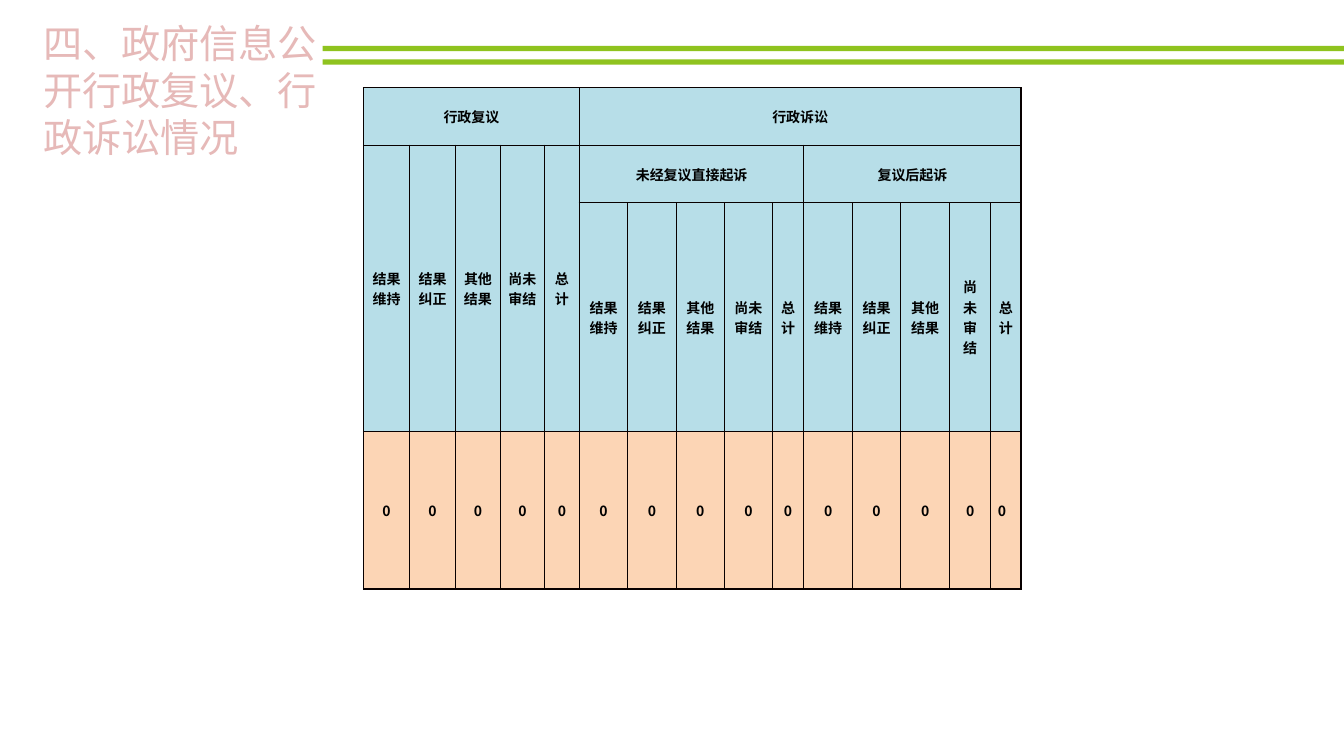
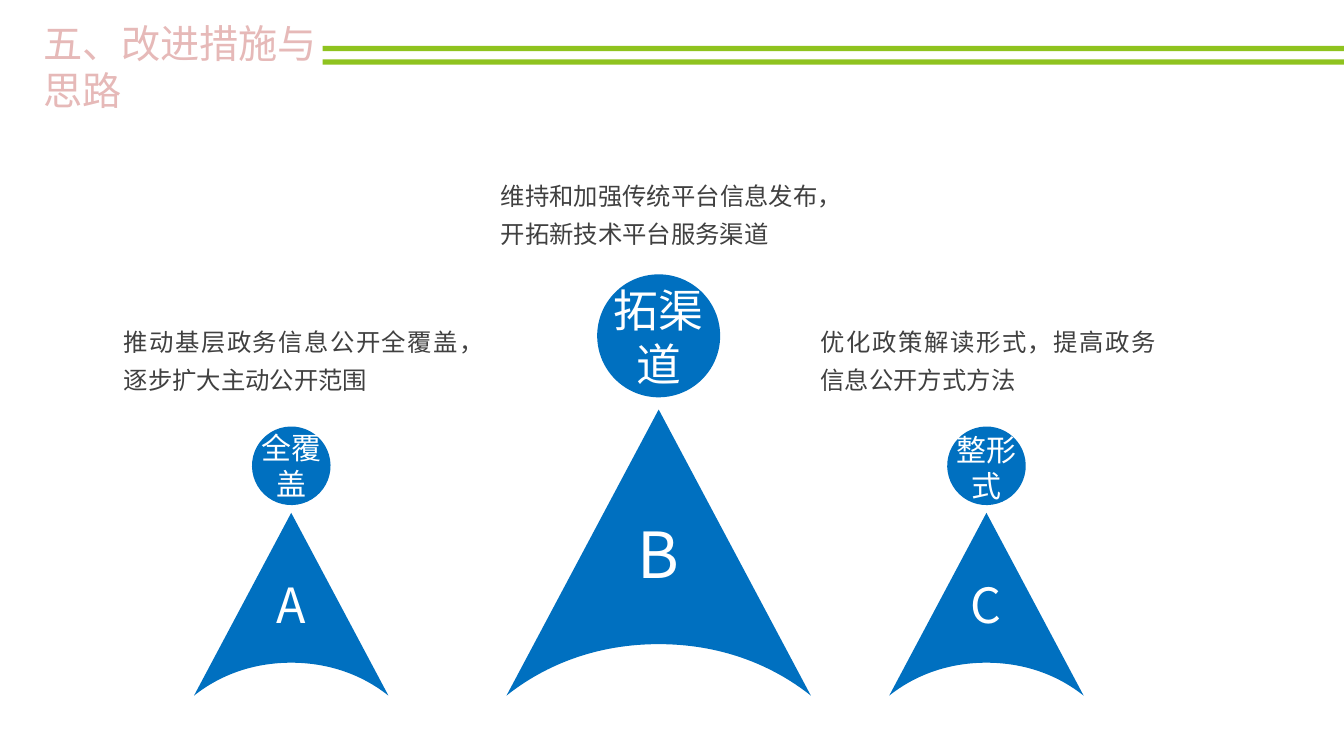
from dataclasses import dataclass
from typing import NamedTuple

from lxml.etree import SubElement
from pptx import Presentation
from pptx.dml.color import RGBColor
from pptx.enum.shapes import MSO_SHAPE as Preset
from pptx.enum.text import MSO_ANCHOR as Anchor, MSO_AUTO_SIZE as AutoSize, PP_ALIGN as Align
from pptx.oxml.ns import qn
from pptx.shapes.base import BaseShape
from pptx.slide import Slide
from pptx.table import Table, _Cell as Cell
from pptx.text.text import TextFrame
from pptx.util import Cm, Pt


@dataclass(frozen=True)
class TextStyle:
    size: float
    color: str
    font: str = "Noto Sans CJK SC"
    east_asian: str = "Calibri"
    bold: bool = False
    align: Align = Align.CENTER
    line_spacing: float | None = None


@dataclass(frozen=True)
class Theme:
    band: str = "8FC31F"
    figure: str = "0070C0"
    header_fill: str = "B7DEE8"
    value_fill: str = "FCD5B5"
    border: str = "080000"
    title_outline: str = "C0504D"
    white: str = "FFFFFF"
    title: TextStyle = TextStyle(28, "E6B9B8", font="Calibri", align=Align.LEFT)
    note: TextStyle = TextStyle(17.4, "404040", align=Align.JUSTIFY, line_spacing=1.3)
    cell: TextStyle = TextStyle(10, "000000", east_asian="Noto Sans CJK SC", bold=True)


THEME = Theme()


class Area(NamedTuple):
    """Left, top, width and height in cm."""
    left: float
    top: float
    width: float
    height: float


@dataclass(frozen=True)
class Figure:
    """A pointed body with a round head above it and a note on top; lengths in cm."""
    letter: str
    label: str
    note: str
    center: float
    width: float
    head_size: float
    letter_size: float
    label_size: float
    label_area: Area
    note_area: Area


@dataclass(frozen=True)
class HeaderCell:
    row: int
    column: int
    text: str
    rows: int = 1
    columns: int = 1


FIGURES = (
    Figure("A", "全覆盖", "推动基层政务信息公开全覆盖，逐步扩大主动公开范围",
           7.34, 4.9, 1.98, 34.6, 21.4,
           Area(6.27, 10.95, 2.13, 1.57), Area(2.79, 7.39, 9.12, 3.2)),
    Figure("B", "拓渠道", "维持和加强传统平台信息发布，开拓新技术平台服务渠道",
           16.6, 7.67, 3.1, 45.4, 32,
           Area(15.24, 7.7, 2.72, 1.55), Area(12.29, 3.71, 8.64, 3.2)),
    Figure("C", "整形式", "优化政策解读形式，提高政务信息公开方式方法",
           24.86, 4.9, 1.98, 34.6, 21.4,
           Area(23.88, 11.02, 1.96, 1.5), Area(20.35, 7.39, 9.12, 3.2)),
)
FIGURE_BOTTOM = 17.53
BODY_RATIO = 0.94
GAP_RATIO = 0.04

OUTCOMES = ("结果维持", "结果纠正", "其他结果", "尚未审结", "总计")
COLUMN_WIDTHS = (1.16, 1.16, 1.13, 1.11, 0.88, 1.22, 1.22, 1.22, 1.2, 0.8,
                 1.22, 1.22, 1.23, 1.04, 0.76)
ROW_HEIGHTS = (1.45, 1.45, 5.76, 3.97)
HEADERS = (
    HeaderCell(0, 0, "行政复议", columns=5),
    HeaderCell(0, 5, "行政诉讼", columns=10),
    HeaderCell(1, 5, "未经复议直接起诉", columns=5),
    HeaderCell(1, 10, "复议后起诉", columns=5),
    *(HeaderCell(1, i, text, rows=2) for i, text in enumerate(OUTCOMES)),
    *(HeaderCell(2, i, text) for i, text in enumerate(OUTCOMES * 2, start=5)),
)


def rgb(color: str) -> RGBColor:
    return RGBColor.from_string(color)


def write(frame: TextFrame, text: str, style: TextStyle) -> None:
    frame.text = text
    for para in frame.paragraphs:
        para.alignment = style.align
        para.line_spacing = style.line_spacing
        for span in para.runs:
            span.font.name = style.font
            span.font.size = Pt(style.size)
            span.font.bold = style.bold
            span.font.color.rgb = rgb(style.color)
            SubElement(span._r.get_or_add_rPr(), qn("a:ea"), typeface=style.east_asian)


def set_insets(frame: TextFrame, side: float, edge: float) -> None:
    frame.margin_left = frame.margin_right = Cm(side)
    frame.margin_top = frame.margin_bottom = Cm(edge)
    frame.vertical_anchor = Anchor.MIDDLE
    frame.word_wrap = True


def paint(shape: BaseShape, color: str) -> None:
    shape.shadow.inherit = False
    shape.fill.solid()
    shape.fill.fore_color.rgb = rgb(color)
    shape.line.fill.background()


def add_line(parent, tag: str, color: str, points: float):
    """Append a solid line definition to an XML parent."""
    line = SubElement(parent, qn(tag), w=str(Pt(points)))
    fill = SubElement(line, qn("a:solidFill"))
    SubElement(fill, qn("a:srgbClr"), val=color)
    return line


def add_text(page: Slide, text: str, style: TextStyle, area: Area,
             side: float = 0, edge: float = 0) -> None:
    box = page.shapes.add_textbox(*map(Cm, area))
    set_insets(box.text_frame, side, edge)
    write(box.text_frame, text, style)


def add_page(deck: Presentation, title: str, title_height: float) -> Slide:
    page = deck.slides.add_slide(deck.slide_layouts.get_by_name("Title Only"))
    for top in (1.16, 1.5):
        band = page.shapes.add_shape(Preset.RECTANGLE, Cm(8.13), Cm(top), Cm(25.74), Cm(0.13))
        paint(band, THEME.band)
    box = page.shapes.title
    box.left, box.top, box.width, box.height = Cm(0.83), Cm(0.36), Cm(7.47), Cm(title_height)
    frame = box.text_frame
    frame.word_wrap = True
    frame.auto_size = AutoSize.SHAPE_TO_FIT_TEXT
    frame.vertical_anchor = Anchor.TOP
    write(frame, title, THEME.title)
    properties = frame.paragraphs[0].runs[0]._r.get_or_add_rPr()
    properties.insert(0, add_line(properties, "a:ln", THEME.title_outline, 1.75))
    return page


def style_cell(cell: Cell, fill: str) -> None:
    cell.margin_left = cell.margin_right = Cm(0.18)
    cell.margin_top = cell.margin_bottom = 0
    cell.vertical_anchor = Anchor.MIDDLE
    for side in "LRTB":
        add_line(cell._tc.get_or_add_tcPr(), f"a:ln{side}", THEME.border, 1)
    cell.fill.solid()
    cell.fill.fore_color.rgb = rgb(fill)


def fill_table(table: Table) -> None:
    value_row = len(ROW_HEIGHTS) - 1
    for row_index, row in enumerate(table.rows):
        for cell in row.cells:
            style_cell(cell, THEME.value_fill if row_index == value_row else THEME.header_fill)
    for header in HEADERS:
        cell = table.cell(header.row, header.column)
        if header.rows * header.columns > 1:
            cell.merge(table.cell(header.row + header.rows - 1,
                                  header.column + header.columns - 1))
        write(cell.text_frame, header.text, THEME.cell)
    last_column = len(COLUMN_WIDTHS) - 1
    for column in range(last_column + 1):
        write(table.cell(value_row, column).text_frame, "0", THEME.cell)
    table.cell(value_row, last_column).text_frame.paragraphs[0].alignment = Align.LEFT


def add_review_table(page: Slide) -> None:
    table = page.shapes.add_table(len(ROW_HEIGHTS), len(COLUMN_WIDTHS), Cm(9.16), Cm(2.21),
                                  Cm(sum(COLUMN_WIDTHS)), Cm(sum(ROW_HEIGHTS))).table
    table.first_row = table.horz_banding = False
    for column, width in zip(table.columns, COLUMN_WIDTHS):
        column.width = Cm(width)
    for row, height in zip(table.rows, ROW_HEIGHTS):
        row.height = Cm(height)
    fill_table(table)


def arch_base(body: BaseShape) -> None:
    """Turn the two straight segments of the base into an arch of two curves."""
    segments = body._element.findall(".//" + qn("a:lnTo"))[1:3]
    controls = (((0.87, 0.89), (0.7, 0.82)), ((0.3, 0.82), (0.13, 0.89)))
    for segment, points in zip(segments, controls):
        segment.tag = qn("a:cubicBezTo")
        for index, (x, y) in enumerate(points):
            point = SubElement(segment, qn("a:pt"), x=str(round(x * body.width)),
                               y=str(round(y * body.height)))
            segment.insert(index, point)


def add_body(page: Slide, figure: Figure, top: float) -> None:
    left, height = figure.center - figure.width / 2, FIGURE_BOTTOM - top
    builder = page.shapes.build_freeform(Cm(figure.center), Cm(top))
    builder.add_line_segments([(Cm(left + x * figure.width), Cm(top + y * height))
                               for x, y in ((1, 1), (0.5, 0.82), (0, 1))])
    body = builder.convert_to_shape()
    arch_base(body)
    paint(body, THEME.figure)
    set_insets(body.text_frame, 0.33, 0.15)
    write(body.text_frame, figure.letter, TextStyle(figure.letter_size, THEME.white))


def add_head(page: Slide, figure: Figure, bottom: float) -> None:
    size = figure.head_size
    head = page.shapes.add_shape(Preset.OVAL, Cm(figure.center - size / 2), Cm(bottom - size),
                                 Cm(size), Cm(size))
    head.rotation = 21.1
    paint(head, THEME.figure)
    add_text(page, figure.label, TextStyle(figure.label_size, THEME.white), figure.label_area)


def add_figure(page: Slide, figure: Figure) -> None:
    body_top = FIGURE_BOTTOM - figure.width * BODY_RATIO
    add_body(page, figure, body_top)
    add_text(page, figure.note, THEME.note, figure.note_area, side=0.33, edge=0.15)
    add_head(page, figure, body_top - figure.width * GAP_RATIO)


def main() -> None:
    deck = Presentation()
    deck.slide_width, deck.slide_height = Cm(33.87), Cm(19.05)
    add_review_table(add_page(deck, "四、政府信息公开行政复议、行政诉讼情况", 3.84))
    measures = add_page(deck, "五、改进措施与思路", 2.64)
    for figure in FIGURES:
        add_figure(measures, figure)
    deck.save("out.pptx")


if __name__ == "__main__":
    main()
